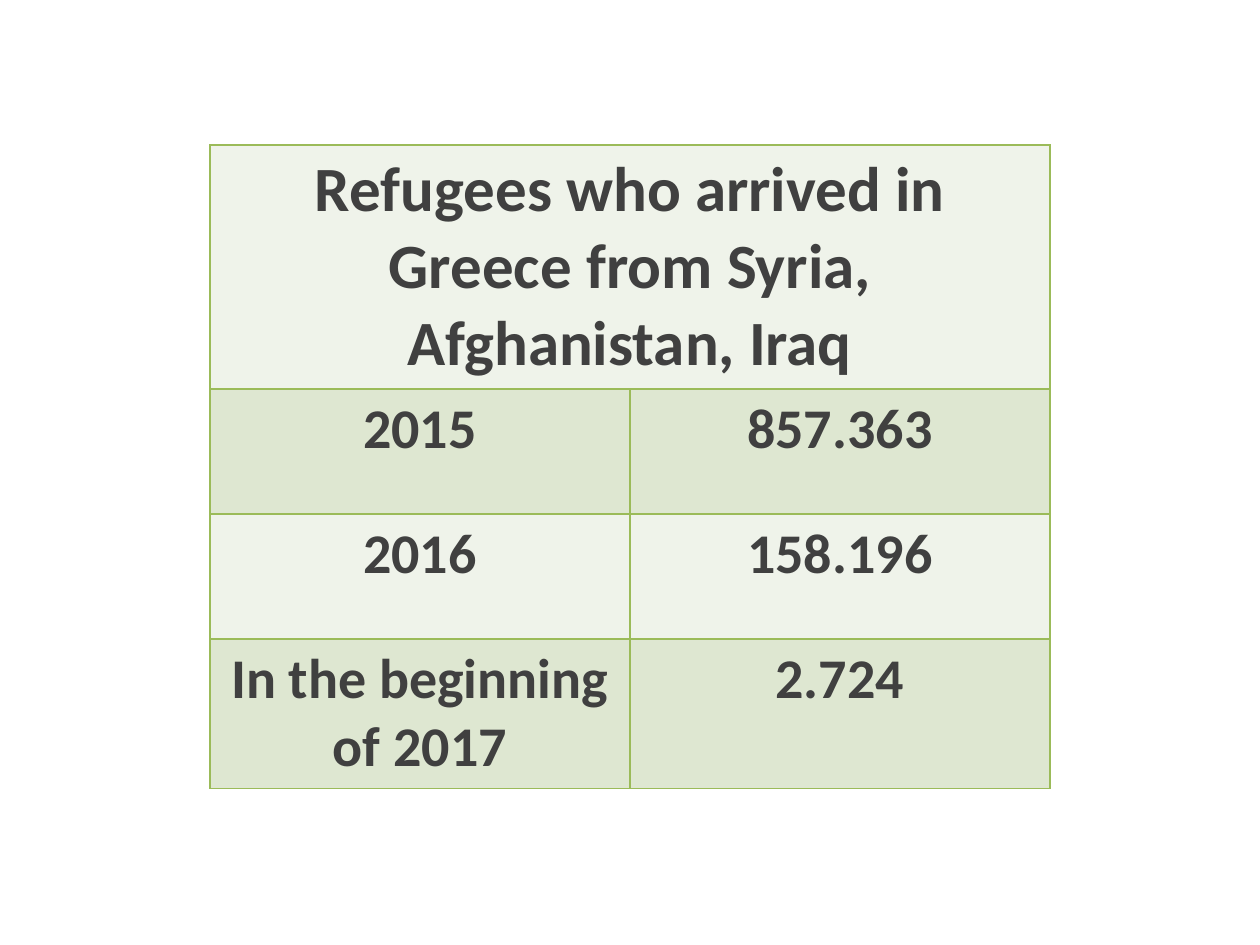
from pptx import Presentation
from pptx import util as u
from pptx.dml.color import RGBColor
from pptx.enum import text
from pptx.oxml import parse_xml
from pptx.oxml.ns import nsdecls

PX = u.Inches(1) / 126
INK = RGBColor(0x40, 0x40, 0x40)
LIGHT = RGBColor(0xEF, 0xF3, 0xEA)
DARK = RGBColor(0xDE, 0xE7, 0xD1)
BORDER = RGBColor(0x9B, 0xBB, 0x59)

TITLE = "Refugees who arrived in Greece from Syria, Afghanistan, Iraq"
ARRIVALS = [
    ("2015", "857.363"),
    ("2016", "158.196"),
    ("Ιn the beginning of 2017", "2.724"),
]


def px(n):
    return u.Emu(round(n * PX))


class Deck:
    """Holds the text style and the current slide."""

    font = {"name": "Calibri", "bold": True}
    title_size, body_size = u.Pt(36), u.Pt(32)

    def __init__(self, width, height):
        self.prs = Presentation()
        self.prs.slide_width, self.prs.slide_height = px(width), px(height)
        self.s = self.prs.slides.add_slide(self.prs.slide_layouts[6])

    def table(self, left, top, width, heights, title, rows):
        """Add a banded table whose first row is one merged title cell."""
        cols = len(rows[0])
        frame = self.s.shapes.add_table(
            len(heights), cols, px(left), px(top), px(width), px(sum(heights)))
        table = frame.table
        for col in table.columns:
            col.width = px(width // cols)
        table.cell(0, 0).merge(table.cell(0, cols - 1))
        grid = [(title,) + ("",) * (cols - 1), *rows]
        for i, (height, values) in enumerate(zip(heights, grid)):
            table.rows[i].height = px(height)
            size = self.body_size if i else self.title_size
            for j, value in enumerate(values):
                self.cell(table.cell(i, j), value, size, DARK if i % 2 else LIGHT)

    def cell(self, cell, value, size, fill):
        self.borders(cell)
        cell.fill.solid()
        cell.fill.fore_color.rgb = fill
        if not value:
            return
        p = cell.text_frame.paragraphs[0]
        p.alignment = text.PP_ALIGN.CENTER
        r = p.add_run()
        r.text = value
        for key, setting in {**self.font, "size": size}.items():
            setattr(r.font, key, setting)
        r.font.color.rgb = INK

    def borders(self, cell):
        """Draw all four edges; call before filling, as the schema orders them."""
        props = cell._tc.get_or_add_tcPr()
        for side in "LRTB":
            props.append(parse_xml(
                f'<a:ln{side} {nsdecls("a")} w="{u.Pt(1)}"><a:solidFill>'
                f'<a:srgbClr val="{BORDER}"/></a:solidFill></a:ln{side}>'))


def main():
    deck = Deck(1260, 945)
    deck.table(210, 145, 840, [240, 125, 125, 147], TITLE, ARRIVALS)
    deck.prs.save("out.pptx")


if __name__ == "__main__":
    main()
